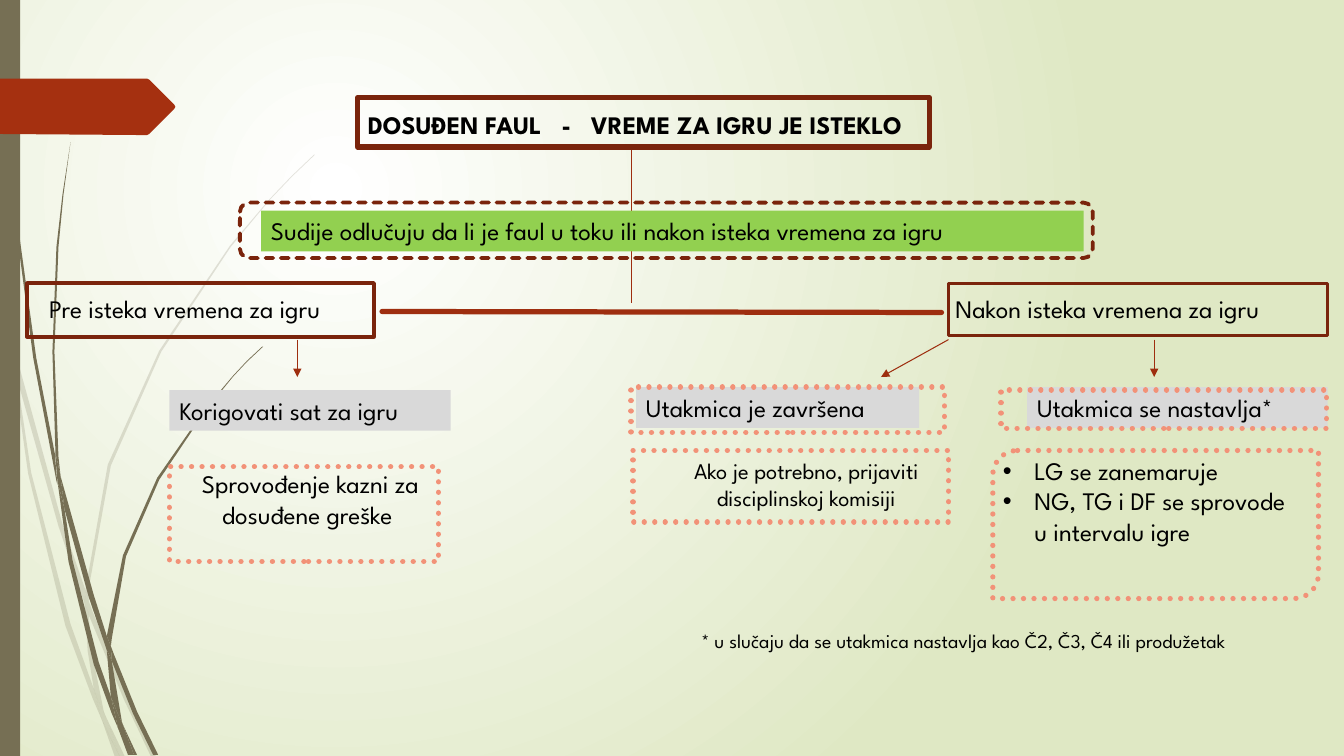
from lxml.etree import SubElement
from pptx import Presentation
from pptx.dml.color import RGBColor
from pptx.enum.dml import MSO_LINE
from pptx.enum.shapes import MSO_CONNECTOR, MSO_SHAPE
from pptx.enum.text import MSO_ANCHOR, MSO_AUTO_SIZE, PP_ALIGN
from pptx.oxml.ns import qn
from pptx.util import Pt

FONT = "League Spartan"
COLORS = {
    "white": "FFFFFF", "sage": "DFE8C4", "olive": "766F54", "rust": "A53010",
    "maroon": "7A240C", "arrow": "9E2E0F", "coral": "F29278",
    "green": "92D050", "gray": "D9D9D9", "black": "000000",
}

TITLE = ("DOSUĐEN FAUL   -   VREME ZA IGRU JE ISTEKLO", (255.6, 74.2, 418.3, 29.1))
RULES = (
    ["LG se zanemaruje", "NG, TG i DF se sprovode u intervalu igre"],
    (709.2, 321.8, 225.4, 94.3),
)
BANNERS = [
    ("Sudije odlučuju da li je faul u toku ili nakon isteka vremena za igru",
     (186.5, 150.5, 587.5, 29.1), "green"),
    ("Korigovati sat za igru", (121, 278.6, 200.9, 29.1), "gray"),
    ("Utakmica je završena", (454.3, 276.5, 202.3, 29.1), "gray"),
    ("Utakmica se nastavlja*", (733.7, 276.5, 214.6, 29.1), "gray"),
]
LABELS = [
    ("Pre isteka vremena za igru", (28.1, 205.9, 250.6, 29.1), 18, PP_ALIGN.LEFT),
    ("Nakon isteka vremena za igru", (675.4, 205.9, 275, 29.1), 18, PP_ALIGN.LEFT),
    ("Sprovođenje kazni za dosuđene greške ", (130.3, 331.2, 182.9, 72.7), 18, PP_ALIGN.CENTER),
    ("Ako je potrebno, prijaviti disciplinskoj komisiji",
     (451.4, 323.3, 249.1, 46.1), 16, PP_ALIGN.CENTER),
    ("* u slučaju da se utakmica nastavlja kao Č2, Č3, Č4 ili produžetak",
     (493.9, 445.7, 465.8, 24.5), 14, PP_ALIGN.LEFT),
]
SOLID, DASH, DOT = MSO_LINE.SOLID, MSO_LINE.SQUARE_DOT, MSO_LINE.ROUND_DOT
RECT, ROUND, DIAGONAL = (
    MSO_SHAPE.RECTANGLE, MSO_SHAPE.ROUNDED_RECTANGLE, MSO_SHAPE.ROUND_2_DIAG_RECTANGLE
)
FRAMES = [
    (RECT, (255.6, 69.8, 408.2, 35.3), "maroon", 3.75, SOLID),
    (RECT, (19.4, 202.3, 247.7, 38.2), "maroon", 3, SOLID),
    (RECT, (677.5, 202.3, 270.7, 37.4), "maroon", 2.25, SOLID),
    (ROUND, (171.4, 144.7, 609.1, 39.6), "maroon", 2.75, DASH),
    (RECT, (121, 333.4, 192.2, 67.7), "coral", 3.75, DOT),
    (RECT, (450.7, 276.5, 223.9, 32.4), "coral", 3.75, DOT),
    (RECT, (715, 278.6, 232.6, 27.4), "coral", 3.75, DOT),
    (DIAGONAL, (709.2, 321.8, 232.6, 105.8), "coral", 3.75, DOT),
]
KOMISIJA_FRAME = (DIAGONAL, (452.2, 321.8, 225.4, 51.1), "coral", 3.75, DOT)
LINKS = [
    ((451.4, 105.8), (451.4, 150.5), 0.75, False),
    ((451.4, 179.3), (451.4, 216.7), 0.75, False),
    ((272.9, 222.5), (672.5, 223.2), 3.75, False),
    ((212.4, 242.6), (212.4, 269.3), 0.75, True),
    ((824.4, 242.6), (824.4, 269.3), 0.75, True),
    ((677.5, 242.6), (629.3, 269.3), 0.75, True),
]
OUTLINE_UNIT = Pt(0.72)
PALE_STEMS = [
    [(11, 350), (9, 322), (0, 282), (0, 299), (10, 344)],
    [(58, 522), (84, 599), (85, 586), (62, 520), (14, 345), (17, 376)],
    [(92, 607), (88, 596), (88, 610), (123, 694), (150, 751), (155, 751), (127, 692)],
    [(119, 751), (124, 751), (105, 711)],
    [(93, 683), (70, 619), (31, 469), (17, 376), (11, 350), (28, 470), (65, 621),
     (92, 693), (101, 714), (99, 707)],
    [(84, 599), (87, 646), (93, 683), (96, 692), (105, 711), (103, 706), (91, 646),
     (88, 610), (88, 608)],
    [(88, 584), (110, 462), (160, 349), (229, 245), (268, 198), (290, 175), (312, 154),
     (312, 153), (289, 175), (268, 197), (228, 244), (158, 348), (107, 461), (85, 584),
     (85, 586), (88, 596)],
    [(101, 714), (114, 751), (119, 751)],
    [(88, 608), (88, 610), (88, 596), (85, 586), (84, 599)],
    [(96, 692), (93, 683), (99, 707), (101, 714), (119, 751), (105, 711)],
]
DARK_STEMS = [
    [(7, 110), (17, 233), (33, 355), (56, 477), (57, 481), (55, 457), (55, 453), (36, 355),
     (19, 232), (8, 109), (5, 48), (4, 0), (3, 0), (4, 48)],
    [(88, 592), (106, 645), (106, 631), (93, 590), (60, 472), (64, 505)],
    [(113, 649), (110, 641), (111, 656), (132, 708), (152, 749), (157, 749), (136, 706)],
    [(110, 691), (98, 657), (72, 556), (64, 505), (57, 477), (68, 557), (93, 659),
     (111, 708), (117, 722), (116, 717)],
    [(60, 472), (58, 453), (54, 349), (58, 245), (63, 193), (70, 141), (62, 193),
     (56, 245), (52, 349), (55, 449)],
    [(133, 749), (136, 749), (122, 719)],
    [(57, 477), (64, 505), (60, 472), (55, 449), (55, 453)],
    [(111, 633), (125, 552), (158, 476), (205, 406), (231, 374), (245, 359), (261, 344),
     (260, 344), (245, 358), (231, 373), (204, 405), (156, 474), (122, 551), (106, 631),
     (110, 641)],
    [(117, 722), (127, 749), (131, 749)],
    [(106, 645), (110, 691), (116, 706), (122, 719), (121, 716), (111, 656), (109, 651)],
    [(106, 645), (109, 651), (111, 656), (110, 641), (106, 631)],
    [(116, 706), (110, 691), (116, 717), (117, 722), (130, 749), (133, 749), (122, 719)],
]
TAG = [(0, 78), (146, 78), (148, 79), (173, 104), (174, 106), (173, 108), (148, 133),
       (146, 134), (136, 134), (0, 133)]


def rgb(name):
    return RGBColor.from_string(COLORS[name])


def draw_line(line, color, width, dash=SOLID):
    line.color.rgb = rgb(color)
    line.width = Pt(width)
    line.dash_style = dash
    if width > 1:
        line._get_or_add_ln().set("cap", "rnd")


def add_box(page, place, kind=RECT, fill=None):
    box = page.shapes.add_shape(kind, *map(Pt, place))
    box.shadow.inherit = False
    box.line.fill.background()
    if fill:
        box.fill.solid()
        box.fill.fore_color.rgb = rgb(fill)
    else:
        box.fill.background()
    return box


def add_frame(page, kind, place, color, width, dash):
    frame = add_box(page, place, kind)
    draw_line(frame.line, color, width, dash)
    return frame


def write(box, lines, size=18, bold=False, align=PP_ALIGN.LEFT, bullet=None):
    frame = box.text_frame
    frame.word_wrap = True
    frame.auto_size = MSO_AUTO_SIZE.NONE
    frame.vertical_anchor = MSO_ANCHOR.TOP
    for number, line in enumerate(lines):
        para = frame.add_paragraph() if number else frame.paragraphs[0]
        para.alignment = align
        para.space_before = Pt(0)
        if bullet:
            layout = para._p.get_or_add_pPr()
            layout.set("marL", str(Pt(22.5)))
            layout.set("indent", str(-Pt(22.5)))
            SubElement(layout, qn("a:buFont"), typeface="Arial")
            SubElement(layout, qn("a:buChar"), char=bullet)
        span = para.add_run()
        span.text = line
        span.font.name = FONT
        span.font.size = Pt(size)
        span.font.bold = bold
        span.font.color.rgb = rgb("black")


def move(box, place):
    box.left, box.top, box.width, box.height = map(Pt, place)


def add_outline(page, corners, fill, alpha=100):
    builder = page.shapes.build_freeform(*corners[0], scale=OUTLINE_UNIT)
    builder.add_line_segments(corners[1:])
    outline = builder.convert_to_shape()
    outline.shadow.inherit = False
    outline.line.fill.background()
    outline.fill.solid()
    outline.fill.fore_color.rgb = rgb(fill)
    if alpha < 100:
        color = outline._element.spPr.find(qn("a:solidFill"))[0]
        SubElement(color, qn("a:alpha"), val=str(alpha * 1000))


def add_link(page, start, end, width, arrow):
    link = page.shapes.add_connector(MSO_CONNECTOR.STRAIGHT, *map(Pt, start + end))
    draw_line(link.line, "arrow", width)
    if arrow:
        SubElement(link.line._get_or_add_ln(), qn("a:tailEnd"), type="triangle")
    SubElement(link._element.spPr, qn("a:effectLst"))


def add_background(page):
    fill = page.background.fill
    fill.gradient()
    for stop, name in zip(fill.gradient_stops, ("white", "sage")):
        stop.color.rgb = rgb(name)
    gradient = page._element.find(".//" + qn("a:gradFill"))
    gradient.remove(gradient.find(qn("a:lin")))
    glow = SubElement(gradient, qn("a:path"), path="circle")
    SubElement(glow, qn("a:fillToRect"), l="50000", t="50000", r="100000", b="100000")


def main():
    deck = Presentation()
    deck.slide_width, deck.slide_height = Pt(960), Pt(540)
    page = deck.slides.add_slide(deck.slide_layouts[1])
    add_background(page)
    for stems, alpha in ((PALE_STEMS, 20), (DARK_STEMS, 100)):
        for corners in stems:
            add_outline(page, corners, "olive", alpha)
    add_box(page, (0, 0, 14.4, 540), fill="olive")
    add_outline(page, TAG, "rust")

    title, rules = page.shapes.title, page.placeholders[1]
    move(title, TITLE[1])
    write(title, [TITLE[0]], bold=True)
    move(rules, RULES[1])
    write(rules, RULES[0], bullet="•")

    for link in LINKS:
        add_link(page, *link)
    for text, place, fill in BANNERS:
        write(add_box(page, place, fill=fill), [text])
    for text, place, size, align in LABELS:
        write(page.shapes.add_textbox(*map(Pt, place)), [text], size=size, align=align)
    for frame in FRAMES:
        add_frame(page, *frame)
    add_frame(page, *KOMISIJA_FRAME).adjustments[0] = 0
    deck.save("out.pptx")


if __name__ == "__main__":
    main()
